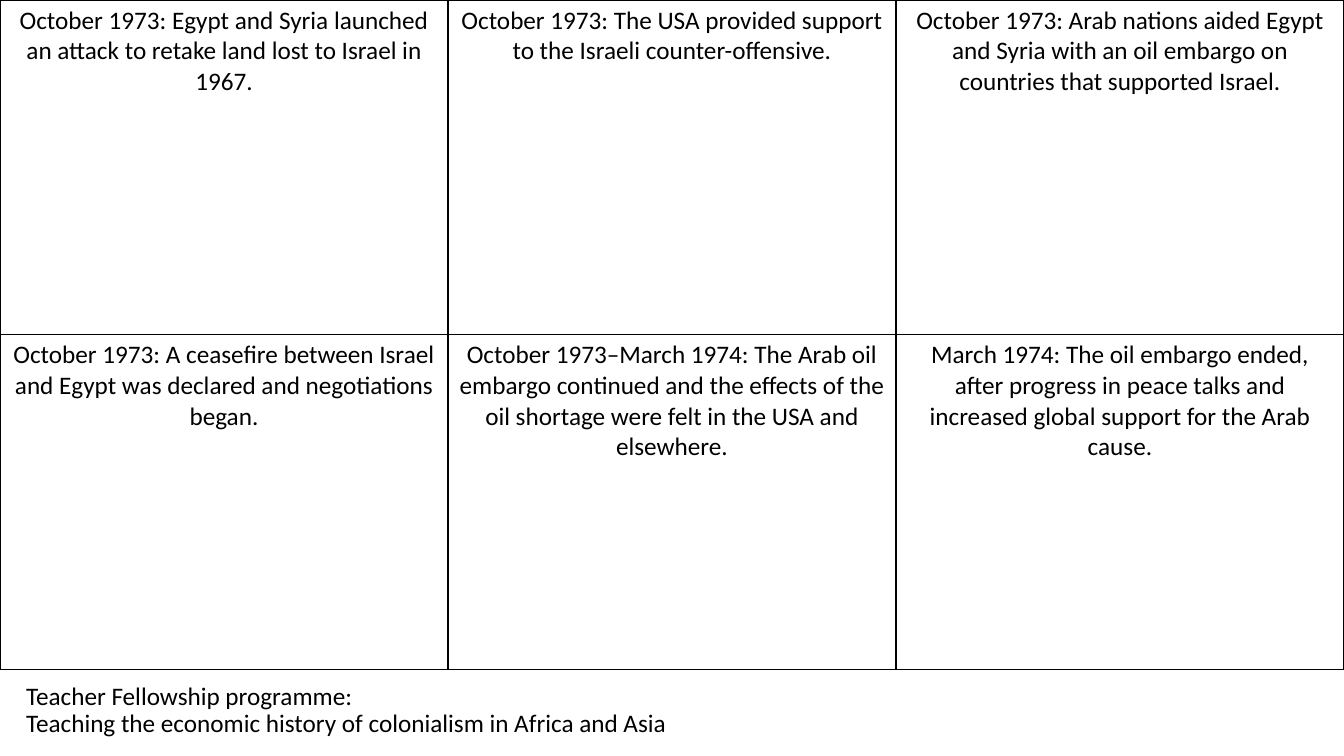
from lxml import etree
from pptx import Presentation
from pptx import util as u
from pptx.dml.color import RGBColor
from pptx.enum import text
from pptx.oxml.ns import qn

BLACK = "000000"
FONT = {"name": "Calibri", "size": u.Pt(18)}

presentation = Presentation()
presentation.slide_width = u.Inches(13.33)
presentation.slide_height = u.Inches(7.5)
slide = presentation.slides.add_slide(presentation.slide_layouts[6])
width, height = presentation.slide_width, presentation.slide_height


def write(paragraph, words, **formats):
    paragraph.text = words
    for name, value in formats.items():
        setattr(paragraph, name, value)
    for name, value in FONT.items():
        setattr(paragraph.font, name, value)
    paragraph.font.color.rgb = RGBColor.from_string(BLACK)


def add_borders(cell, color, points):
    properties = cell._tc.get_or_add_tcPr()
    for side in ("lnL", "lnR", "lnT", "lnB"):
        line = etree.SubElement(properties, qn(f"a:{side}"), w=str(u.Pt(points)))
        fill = etree.SubElement(line, qn("a:solidFill"))
        etree.SubElement(fill, qn("a:srgbClr"), val=color)


# Programme name under the storyboard
programme = [
    "Teacher Fellowship programme:",
    "Teaching the economic history of colonialism in Africa and Asia",
]
footer = slide.shapes.add_textbox(
    u.Inches(0.16), u.Inches(6.64), u.Inches(6.78), u.Inches(0.82))
frame = footer.text_frame
frame.word_wrap = True
frame.vertical_anchor = text.MSO_ANCHOR.MIDDLE
for index, words in enumerate(programme):
    paragraph = frame.add_paragraph() if index else frame.paragraphs[0]
    write(paragraph, words, line_spacing=0.9)

# Storyboard: one event in each cell
events = [
    [
        "October 1973: Egypt and Syria launched an attack to retake land lost to Israel in 1967.",
        "October 1973: The USA provided support to the Israeli counter-offensive.",
        "October 1973: Arab nations aided Egypt and Syria with an oil embargo on countries that supported Israel.",
    ],
    [
        "October 1973: A ceasefire between Israel and Egypt was declared and negotiations began.",
        "October 1973–March 1974: The Arab oil embargo continued and the effects of the oil shortage were felt in the USA and elsewhere.",
        "March 1974: The oil embargo ended, after progress in peace talks and increased global support for the Arab cause.",
    ],
]
table = slide.shapes.add_table(
    len(events), len(events[0]), 0, 0, width, u.Inches(6.64)).table
table.first_row = False
table.horz_banding = False
for row, row_events in enumerate(events):
    for column, event in enumerate(row_events):
        cell = table.cell(row, column)
        add_borders(cell, BLACK, 1)
        cell.fill.background()
        write(cell.text_frame.paragraphs[0], event, alignment=text.PP_ALIGN.CENTER)

presentation.save("out.pptx")
